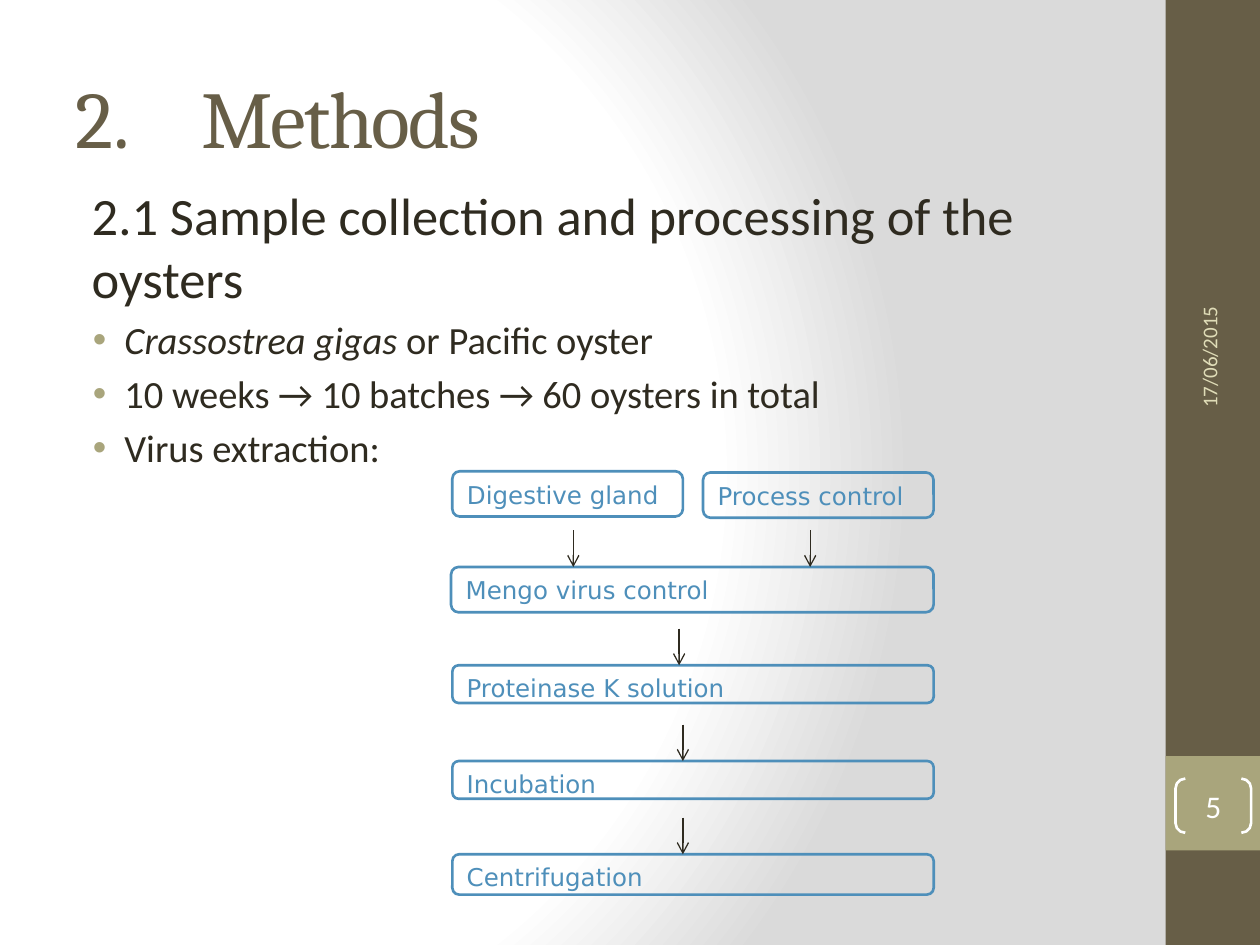
from lxml.etree import SubElement
from pptx import Presentation
from pptx.dml.color import RGBColor
from pptx.enum.shapes import MSO_CONNECTOR, MSO_SHAPE
from pptx.enum.text import MSO_ANCHOR, PP_ALIGN
from pptx.oxml import parse_xml
from pptx.oxml.ns import nsdecls, qn
from pptx.util import Emu, Pt

# Content: lengths in px, 100 px to the inch
PX = 9144
BROWN, SAGE, INK, BLUE, WHITE = "675E47", "A9A57C", "2F2B20", "4E8FBA", "FFFFFF"
BODY, HEAD, FLOW = "Calibri", "Cambria", "DejaVu Sans"

TITLE = "Methods"
TOPIC = "2.1 Sample collection and processing of the oysters"
BULLETS = [
    [("Crassostrea gigas", True), (" or Pacific oyster", False)],
    [("10 weeks → 10 batches → 60 oysters in total", False)],
    [("Virus extraction:", False)],
]
BANDS = [((925, 0, 75, 750), BROWN), ((925, 600, 75, 75), SAGE)]
STEPS = [  # text, left, top, width, height
    ("Digestive gland", 359, 374, 183, 36),
    ("Process control", 558, 375, 183, 36),
    ("Mengo virus control", 358, 450, 383, 36),
    ("Proteinase K solution", 359, 528, 382, 30),
    ("Incubation", 359, 604, 382, 30),
    ("Centrifugation", 359, 678, 382, 32),
]
ARROWS = [(455, 450), (643, 450), (539, 528), (542, 604), (542, 678)]  # tips
DROP = 29

BACK = f"""<p:bg {nsdecls('p', 'a')}><p:bgPr><a:gradFill rotWithShape="1"><a:gsLst>
<a:gs pos="0"><a:srgbClr val="FFFFFF"/></a:gs>
<a:gs pos="75000"><a:srgbClr val="FFFFFF"/></a:gs>
<a:gs pos="100000"><a:srgbClr val="DADADA"/></a:gs></a:gsLst>
<a:path path="circle"><a:fillToRect l="20000" t="50000" r="100000" b="50000"/></a:path>
</a:gradFill><a:effectLst/></p:bgPr></p:bg>"""


def px(*vals):
    return [Emu(v * PX) for v in vals]


def color(hue):
    return RGBColor.from_string(hue)


def add_run(para, text, size, font, hue, italic=False):
    run = para.add_run()
    run.text = text
    run.font.size, run.font.name, run.font.italic = Pt(size), font, italic
    run.font.color.rgb = color(hue)
    return run


def add_box(at, anchor=MSO_ANCHOR.TOP):
    box = slide.shapes.add_textbox(*px(*at))
    box.text_frame.word_wrap = True
    box.text_frame.vertical_anchor = anchor
    return box


def add_form(kind, at, fill=None, line=None):
    form = slide.shapes.add_shape(kind, *px(*at))
    form.shadow.inherit = False
    if fill:
        form.fill.solid()
        form.fill.fore_color.rgb = color(fill)
    else:
        form.fill.background()
    if line:
        form.line.color.rgb = color(line)
        form.line.width = Pt(1.5)
    else:
        form.line.fill.background()
    return form


def indent(para, left, first):
    props = para._p.get_or_add_pPr()
    props.set("marL", str(left * PX))
    props.set("indent", str(first * PX))
    return props


deck = Presentation()
deck.slide_width, deck.slide_height = px(1000, 750)
slide = deck.slides.add_slide(deck.slide_layouts[6])
slide.element.cSld.insert(0, parse_xml(BACK))

# Side bands
for at, hue in BANDS:
    add_form(MSO_SHAPE.RECTANGLE, at, fill=hue)

# Numbered title
para = add_box((50, 30, 833, 125), MSO_ANCHOR.MIDDLE).text_frame.paragraphs[0]
SubElement(indent(para, 100, -100), qn("a:buAutoNum"), type="arabicPeriod", startAt="2")
run = add_run(para, TITLE, 46, HEAD, BROWN)
run.font._element.set("spc", "-100")

# Topic and bullets
frame = add_box((51, 140, 834, 590)).text_frame
para = frame.paragraphs[0]
indent(para, 12, 0)
para.space_before = Pt(6)
add_run(para, TOPIC, 30, BODY, INK)
for parts in BULLETS:
    para = frame.add_paragraph()
    para.space_before = Pt(4.4)
    props = indent(para, 38, -25)
    SubElement(SubElement(props, qn("a:buClr")), qn("a:srgbClr"), val=SAGE)
    SubElement(props, qn("a:buFont"), typeface="Arial")
    SubElement(props, qn("a:buChar"), char="•")
    for text, italic in parts:
        add_run(para, text, 22, BODY, INK, italic)

# Date and page number
date = add_box((826, 180, 267, 40), MSO_ANCHOR.MIDDLE)
date.rotation = 270
add_run(date.text_frame.paragraphs[0], "17/06/2015", 12, BODY, "DFDCB7")

page = add_form(MSO_SHAPE.DOUBLE_BRACKET, (933, 618, 60, 43), line=WHITE)
page.adjustments[0] = 0.18
frame = page.text_frame
frame.margin_left = frame.margin_right = frame.margin_top = frame.margin_bottom = 0
frame.vertical_anchor = MSO_ANCHOR.MIDDLE
frame.paragraphs[0].alignment = PP_ALIGN.CENTER
add_run(frame.paragraphs[0], "5", 18, BODY, WHITE)

# Flow chart steps
for text, *at in STEPS:
    frame = add_form(MSO_SHAPE.ROUNDED_RECTANGLE, at, line=BLUE).text_frame
    frame.word_wrap = True
    frame.vertical_anchor = MSO_ANCHOR.TOP
    frame.paragraphs[0].alignment = PP_ALIGN.LEFT
    add_run(frame.paragraphs[0], text, 14, FLOW, BLUE)

# Flow chart arrows
for x, tip in ARROWS:
    link = slide.shapes.add_connector(MSO_CONNECTOR.STRAIGHT, *px(x, tip - DROP, x, tip))
    link.line.color.rgb = color(INK)
    link.line.width = Pt(0.75)
    SubElement(link.line._get_or_add_ln(), qn("a:tailEnd"), type="arrow")
    SubElement(link._element.spPr, qn("a:effectLst"))

deck.save("out.pptx")
